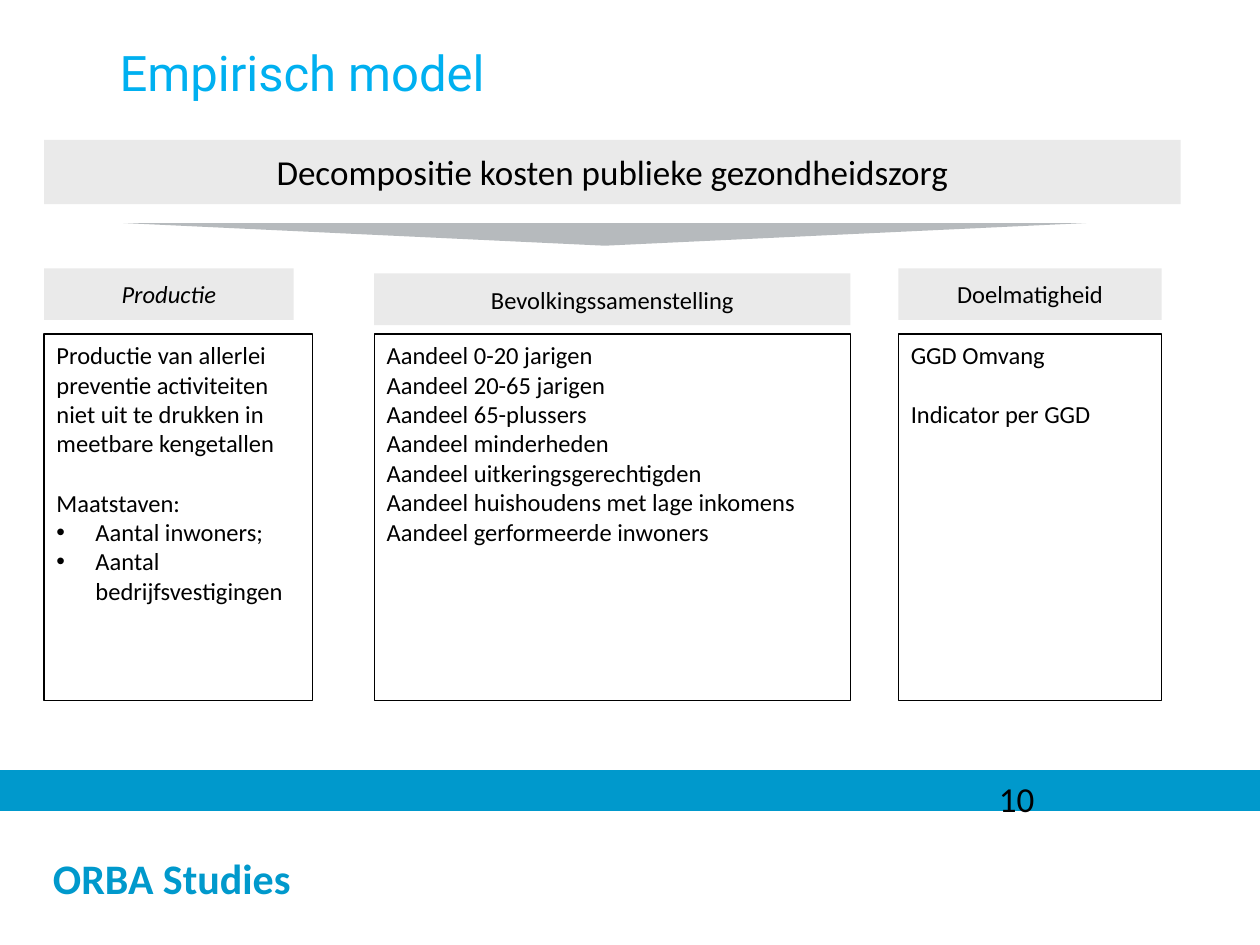
from lxml.etree import SubElement
from pptx import Presentation
from pptx.dml.color import RGBColor
from pptx.enum.shapes import MSO_SHAPE
from pptx.enum.text import MSO_ANCHOR, PP_ALIGN
from pptx.oxml.ns import qn
from pptx.util import Inches, Pt

COLOURS = {
    "black": "000000",
    "white": "FFFFFF",
    "bar": "0099CC",
    "title": "00B0F0",
    "heading": "EAEAEA",
    "arrow": "B6BABD",
}
GRID_COLUMNS, GRID_ROWS = 100, 75
BULLET_INDENT = Inches(0.31)
BLANK_LINE = 17


class SlideBuilder:
    """Draws styled elements on one slide, placed on a grid of columns and rows."""

    def __init__(self, presentation):
        self.slide = presentation.slides.add_slide(presentation.slide_layouts[6])
        self.column = presentation.slide_width / GRID_COLUMNS
        self.row = presentation.slide_height / GRID_ROWS

    def place(self, left, top, width, height):
        return (round(left * self.column), round(top * self.row),
                round(width * self.column), round(height * self.row))

    def colour(self, name):
        return RGBColor.from_string(COLOURS[name])

    def shape(self, area, fill, line=None, kind=MSO_SHAPE.RECTANGLE):
        shape = self.slide.shapes.add_shape(kind, *self.place(*area))
        shape.shadow.inherit = False
        shape.fill.solid()
        shape.fill.fore_color.rgb = self.colour(fill)
        if line:
            shape.line.color.rgb = self.colour(line)
            shape.line.width = Pt(0.75)
        else:
            shape.line.fill.background()
        return shape

    def add_text(self, shape, entries, size=14, colour="black", font="Calibri",
                 anchor=MSO_ANCHOR.TOP, align=PP_ALIGN.LEFT, bold=False, italic=False):
        frame = shape.text_frame
        frame.word_wrap = True
        frame.vertical_anchor = anchor
        for index, (text, space_before, bulleted) in enumerate(entries):
            paragraph = frame.add_paragraph() if index else frame.paragraphs[0]
            paragraph.alignment = align
            if space_before:
                paragraph.space_before = Pt(space_before)
            if bulleted:
                self.add_bullet(paragraph)
            run = paragraph.add_run()
            run.text = text
            run.font.name = font
            run.font.size = Pt(size)
            run.font.bold = bold
            run.font.italic = italic
            run.font.color.rgb = self.colour(colour)
        return frame

    def add_bullet(self, paragraph):
        properties = paragraph._p.get_or_add_pPr()
        properties.set("marL", str(BULLET_INDENT))
        properties.set("indent", str(-BULLET_INDENT))
        SubElement(properties, qn("a:buFont")).set("typeface", "Arial")
        SubElement(properties, qn("a:buChar")).set("char", "•")

    def heading(self, area, text, size=14, italic=False):
        self.add_text(self.shape(area, "heading"), [(text, 0, False)], size,
                      anchor=MSO_ANCHOR.MIDDLE, align=PP_ALIGN.CENTER, italic=italic)

    def panel(self, area, entries):
        self.add_text(self.shape(area, "white", "black"), entries)

    def label(self, area, text, **style):
        box = self.slide.shapes.add_textbox(*self.place(*area))
        return self.add_text(box, [(text, 0, False)], **style)

    def down_arrow(self, area):
        self.shape(area, "arrow", kind=MSO_SHAPE.ISOSCELES_TRIANGLE).rotation = 180

    def footer(self, name):
        band = self.shape((0, 64.4, 100, 10.6), "white")
        frame = self.add_text(band, [(name, 0, False)], 24, "bar",
                              anchor=MSO_ANCHOR.MIDDLE, bold=True)
        frame.margin_left = round(4.2 * self.column)
        self.shape((0, 61.2, 100, 3.1), "bar", "bar")


def main():
    presentation = Presentation()
    presentation.slide_width = Inches(10)
    presentation.slide_height = Inches(7.5)
    builder = SlideBuilder(presentation)

    builder.footer("ORBA Studies")
    title = builder.label((3.5, 2.9, 88.2, 5.7), "Empirisch model",
                          size=28, colour="title", font="Roboto")
    title.margin_left = Inches(0.6)
    builder.heading((3.5, 11.1, 90.2, 5.1),
                    "Decompositie kosten publieke gezondheidszorg", size=20)
    builder.down_arrow((9.8, 17.7, 76.4, 1.8))

    production = [
        ("Productie van allerlei preventie activiteiten niet uit te drukken "
         "in meetbare kengetallen", 0, False),
        ("Maatstaven:", BLANK_LINE, False),
        ("Aantal inwoners;", 0, True),
        ("Aantal bedrijfsvestigingen", 0, True),
    ]
    groups = ("0-20 jarigen", "20-65 jarigen", "65-plussers", "minderheden",
              "uitkeringsgerechtigden", "huishoudens met lage inkomens",
              "gerformeerde inwoners")
    population = [(f"Aandeel {group}", 0, False) for group in groups]
    efficiency = [("GGD Omvang", 0, False),
                  ("Indicator per GGD", BLANK_LINE, False)]

    themes = [
        ("Productie", 3.5, 21.3, 19.8, 21.3, True, production),
        ("Bevolkingssamenstelling", 29.7, 21.7, 37.8, 37.8, False, population),
        ("Doelmatigheid", 71.3, 21.3, 20.9, 20.9, False, efficiency),
    ]
    for name, left, top, heading_width, panel_width, italic, entries in themes:
        builder.heading((left, top, heading_width, 4.1), name, italic=italic)
        builder.panel((left, 26.5, panel_width, 29.1), entries)

    builder.label((78.3, 61.2, 20.8, 2.5), "10", size=20)
    presentation.save("out.pptx")


if __name__ == "__main__":
    main()
